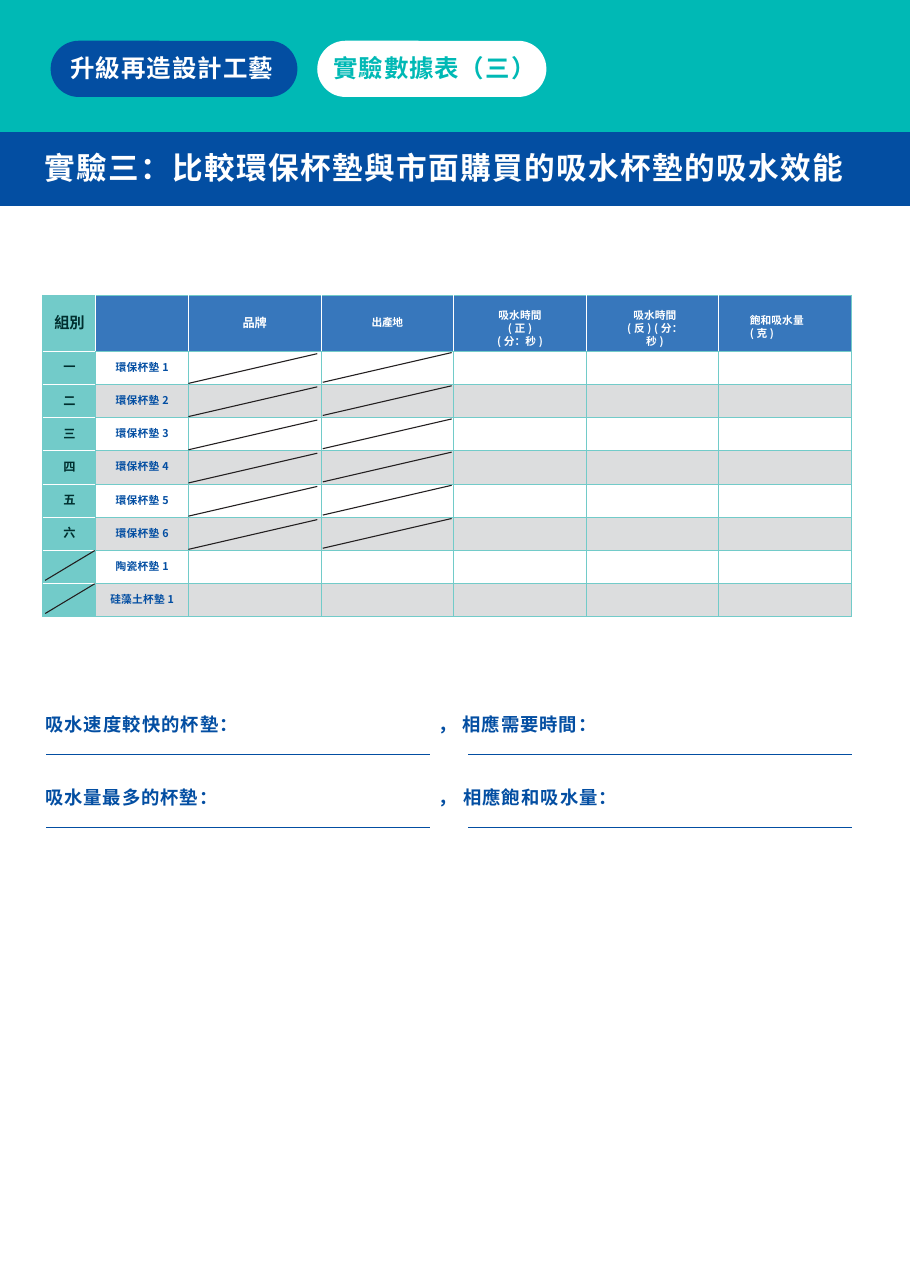
from lxml import etree
from pptx import Presentation
from pptx.dml.color import RGBColor
from pptx.enum.shapes import MSO_CONNECTOR, MSO_SHAPE
from pptx.enum.text import MSO_ANCHOR, PP_ALIGN
from pptx.oxml.ns import qn
from pptx.util import Inches, Pt

RECT, PILL = MSO_SHAPE.RECTANGLE, MSO_SHAPE.ROUNDED_RECTANGLE
STRAIGHT = MSO_CONNECTOR.STRAIGHT
LEFT, CENTER = PP_ALIGN.LEFT, PP_ALIGN.CENTER
MIDDLE = MSO_ANCHOR.MIDDLE

FONT = "Noto Sans CJK SC"
TEAL = RGBColor(0x00, 0xB9, 0xB5)
LIGHT_TEAL = RGBColor(0x72, 0xCB, 0xC9)
DARK_TEAL = RGBColor(0x00, 0x2F, 0x2F)
NAVY = RGBColor(0x03, 0x4E, 0xA2)
BLUE = RGBColor(0x37, 0x77, 0xBC)
GRAY = RGBColor(0xDC, 0xDD, 0xDE)
BLACK = RGBColor(0x23, 0x1F, 0x20)
WHITE = RGBColor(0xFF, 0xFF, 0xFF)

# Table geometry in inches
TABLE_LEFT, TABLE_TOP, TABLE_W, TABLE_H = 0.39, 2.68, 7.34, 2.92
GROUP_W, COASTER_W, HEADER_H = 0.48, 0.84, 0.51
DATA_W = (TABLE_W - GROUP_W - COASTER_W) / 5
ROW_H = (TABLE_H - HEADER_H) / 8

# Header: lines, size, spacing, alignment, left and top margins
HEADERS = [
    (["組別"], 10, -0.2, CENTER, 0, 0),
    ([], 7, 0, CENTER, 0, 0),
    (["品牌"], 8, -0.2, CENTER, 0, 0),
    (["出產地"], 7, -0.2, CENTER, 0, 0),
    (["吸水時間", "( 正 )", "( 分：秒 )"], 7, 0.1, CENTER, 0, 0.1),
    (["吸水時間", "( 反 ) ( 分：", "秒 )"], 7, 0.1, CENTER, 0.04, 0.1),
    (["飽和吸水量", "( 克 )"], 7, 0.1, LEFT, 0.28, 0.08),
]
GROUPS = ["一", "二", "三", "四", "五", "六", "", ""]
COASTERS = [("環保杯墊 ", str(n)) for n in range(1, 7)]
COASTERS += [("陶瓷杯墊 ", "1"), ("硅藻土杯墊 ", "1")]


def write_paragraph(p, runs, size, color, align=LEFT):
    """Write (text, letter spacing) runs into one paragraph."""
    p.alignment = align
    p.line_spacing = Pt(size * 1.2)
    for text, spacing in runs:
        r = p.add_run()
        r.text = text
        r.font.name = FONT
        r.font.size = Pt(size)
        r.font.bold = True
        r.font.color.rgb = color
        rPr = r._r.get_or_add_rPr()
        rPr.set("spc", str(round(spacing * 100)))
        etree.SubElement(rPr, qn("a:ea"), typeface=FONT)
    if not runs:
        etree.SubElement(p._p, qn("a:endParaRPr"), sz=str(size * 100))


def add_block(s, kind, x, y, w, h, color):
    sp = s.shapes.add_shape(kind, Inches(x), Inches(y), Inches(w), Inches(h))
    sp.shadow.inherit = False
    sp.fill.solid()
    sp.fill.fore_color.rgb = color
    sp.line.fill.background()
    if kind == PILL:
        sp.adjustments[0] = 0.5


def add_text(s, x, y, w, h, runs, size, color):
    sp = s.shapes.add_textbox(Inches(x), Inches(y), Inches(w), Inches(h))
    tf = sp.text_frame
    tf.word_wrap = True
    tf.margin_left = tf.margin_right = tf.margin_bottom = 0
    tf.margin_top = Inches(0.01)
    p = tf.paragraphs[0]
    p.space_before = Pt(1)
    write_paragraph(p, runs, size, color)


def add_line(s, x1, y1, x2, y2, color, width):
    line = s.shapes.add_connector(
        STRAIGHT, Inches(x1), Inches(y1), Inches(x2), Inches(y2))
    line.line.color.rgb = color
    line.line.width = Pt(width)
    etree.SubElement(line._element.spPr, qn("a:effectLst"))


def style_cell(cell, fill, sides):
    """Set margins, fill and the left, right, top and bottom border colours."""
    cell.margin_left = cell.margin_right = 0
    cell.margin_top = cell.margin_bottom = 0
    cell.vertical_anchor = MIDDLE
    tcPr = cell._tc.get_or_add_tcPr()
    for side, color in zip("LRTB", sides):
        ln = etree.SubElement(tcPr, qn(f"a:ln{side}"), w=str(Pt(0.75)))
        solid = etree.SubElement(ln, qn("a:solidFill"))
        etree.SubElement(solid, qn("a:srgbClr"), val=str(color))
    cell.fill.solid()
    cell.fill.fore_color.rgb = fill


def fill_header(table):
    for c, (lines, size, spacing, align, left, top) in enumerate(HEADERS):
        cell = table.cell(0, c)
        first, last = c == 0, c == len(HEADERS) - 1
        style_cell(cell, LIGHT_TEAL if first else BLUE,
                   (LIGHT_TEAL if first else WHITE,
                    LIGHT_TEAL if last else WHITE,
                    LIGHT_TEAL, WHITE if first else LIGHT_TEAL))
        cell.margin_left, cell.margin_top = Inches(left), Inches(top)
        tf = cell.text_frame
        color = DARK_TEAL if first else WHITE
        for i, line in enumerate(lines or [""]):
            p = tf.add_paragraph() if i else tf.paragraphs[0]
            write_paragraph(p, [(line, spacing)] if line else [], size, color, align)


def fill_body(table):
    for row, (group, (name, number)) in enumerate(zip(GROUPS, COASTERS), 1):
        row_fill = WHITE if row % 2 else GRAY
        last = row == len(GROUPS)
        for c in range(len(HEADERS)):
            cell = table.cell(row, c)
            p = cell.text_frame.paragraphs[0]
            if c == 0:
                style_cell(cell, LIGHT_TEAL, (LIGHT_TEAL, LIGHT_TEAL, WHITE,
                                              LIGHT_TEAL if last else WHITE))
                runs = [(group, -0.5)] if group else []
                write_paragraph(p, runs, 8, DARK_TEAL, CENTER)
            else:
                style_cell(cell, row_fill, [LIGHT_TEAL] * 4)
                runs = [(name, 0.2), (number, -0.5)] if c == 1 else []
                write_paragraph(p, runs, 7, NAVY, CENTER)


def add_data_table(s):
    frame = s.shapes.add_table(
        len(GROUPS) + 1, len(HEADERS), Inches(TABLE_LEFT), Inches(TABLE_TOP),
        Inches(TABLE_W), Inches(TABLE_H))
    table = frame.table
    table.first_row = table.horz_banding = False
    for column, width in zip(table.columns, [GROUP_W, COASTER_W] + [DATA_W] * 5):
        column.width = Inches(width)
    for i, row in enumerate(table.rows):
        row.height = Inches(ROW_H if i else HEADER_H)
    fill_header(table)
    fill_body(table)


def add_strikes(s):
    """Cross out the cells that need no entry."""
    for i in range(len(GROUPS)):
        y = 3.21 + i * ROW_H
        if i < 6:
            add_line(s, 2.88, y, 1.71, y + 0.27, BLACK, 0.7)
            add_line(s, 4.1, y - 0.01, 2.93, y + 0.26, BLACK, 0.7)
        else:
            add_line(s, 0.86, y - 0.02, 0.41, y + 0.25, BLACK, 0.7)


def main():
    prs = Presentation()
    prs.slide_width, prs.slide_height = Inches(8.26), Inches(11.69)
    s = prs.slides.add_slide(prs.slide_layouts[6])

    # Banner, labels and title
    add_block(s, RECT, 0, 0, 8.26, 1.2, TEAL)
    add_block(s, PILL, 2.88, 0.37, 2.08, 0.51, WHITE)
    add_text(s, 3.03, 0.47, 2.08, 0.28,
             [("實驗數據表", 0.5), ("（三", 0.8), ("）", 0.3)], 16, TEAL)
    add_block(s, RECT, 0, 1.2, 8.26, 0.67, NAVY)
    add_text(s, 0.4, 1.34, 7.73, 0.35,
             [("實驗三：比較環保杯墊與市面購買的吸水杯墊的吸水效能", 0.9)], 20, WHITE)
    add_block(s, PILL, 0.46, 0.37, 2.24, 0.51, NAVY)
    add_text(s, 0.64, 0.47, 2, 0.28, [("升級再造設計工藝", 0.7)], 16, WHITE)

    # Data table
    add_data_table(s)
    add_strikes(s)

    # Conclusions to fill in
    conclusions = [
        (6.46, 6.85, ("吸水速度較快的杯墊：", 0.7), ("， 相應需要時間：", 0.6)),
        (7.13, 7.51, ("吸水量最多的杯墊：", 0.6), ("， 相應飽和吸水量：", 0.7)),
    ]
    for text_y, line_y, answer, measure in conclusions:
        add_text(s, 0.41, text_y, 2, 0.22, [answer], 12, NAVY)
        add_text(s, 3.98, text_y, 2, 0.22, [measure], 12, NAVY)
        for x in (0.42, 4.25):
            add_line(s, x, line_y, x + 3.48, line_y, NAVY, 1)

    prs.save("out.pptx")


if __name__ == "__main__":
    main()
